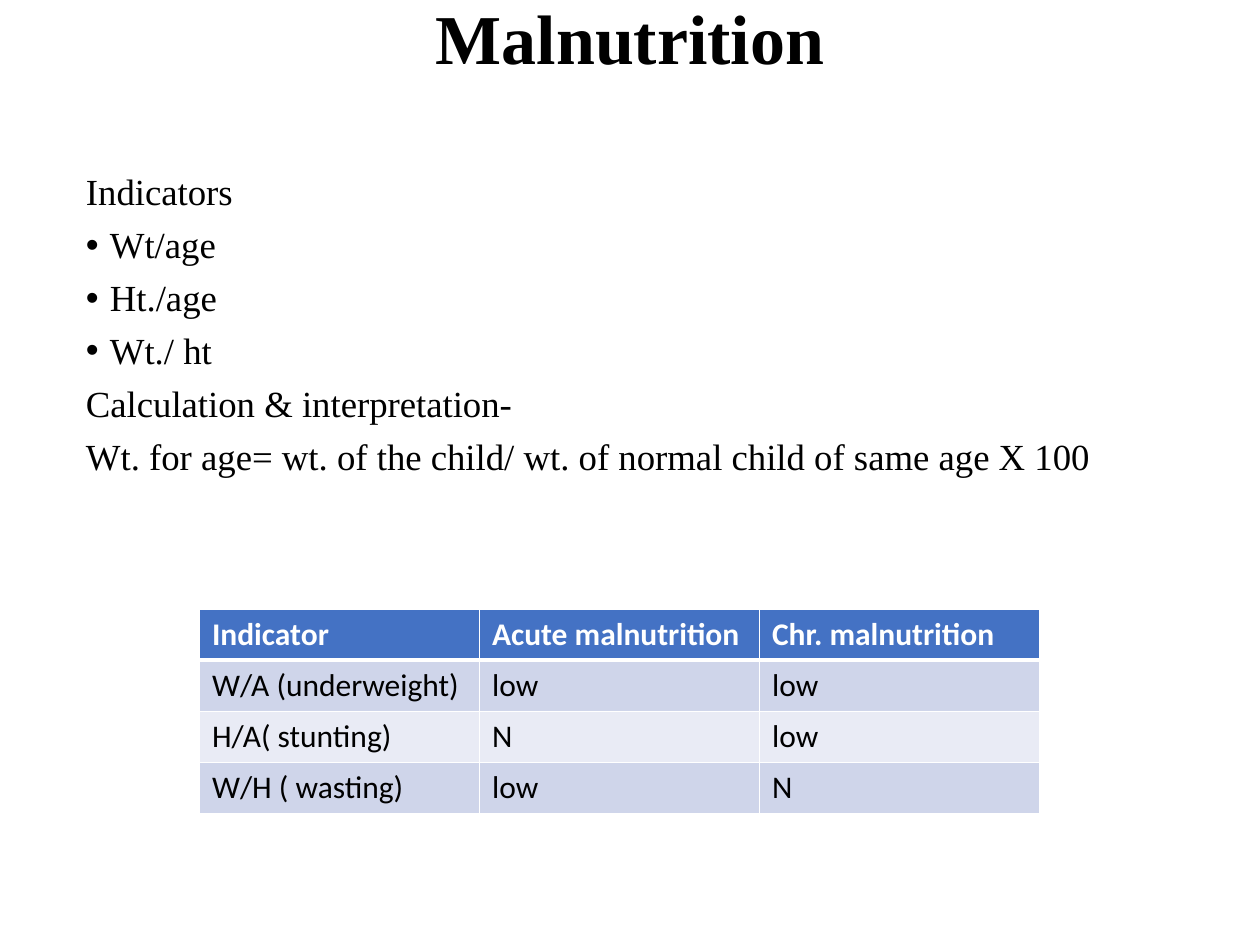
import lxml.etree
import pptx
import pptx.dml.color
import pptx.enum.text
import pptx.oxml.ns
import pptx.util

RGBColor = pptx.dml.color.RGBColor
Align = pptx.enum.text.PP_ALIGN
Anchor = pptx.enum.text.MSO_ANCHOR
Pt = pptx.util.Pt

BLACK = RGBColor(0x00, 0x00, 0x00)
WHITE = RGBColor(0xFF, 0xFF, 0xFF)
HEADER_BLUE = RGBColor(0x44, 0x72, 0xC4)
BAND_DARK = RGBColor(0xCF, 0xD5, 0xEA)
BAND_LIGHT = RGBColor(0xE9, 0xEB, 0xF5)

SERIF = "Times New Roman"
SANS = "Calibri"

# Each line of the body: text, whether it has a bullet
BODY = [
    ("Indicators", False),
    ("Wt/age", True),
    ("Ht./age", True),
    ("Wt./ ht", True),
    ("Calculation & interpretation-", False),
    ("Wt. for age= wt. of the child/ wt. of normal child of same age X 100", False),
]

INDICATORS = [
    ["Indicator", "Acute malnutrition", "Chr. malnutrition"],
    ["W/A (underweight)", "low", "low"],
    ["H/A( stunting)", "N", "low"],
    ["W/H ( wasting)", "low", "N"],
]


def add_child(parent, tag, **attributes):
    child = lxml.etree.SubElement(parent, pptx.oxml.ns.qn(tag))
    for name, value in attributes.items():
        child.set(name, str(value))
    return child


class SlideBuilder:
    """Places elements on a grid of 12 columns and 9 rows."""

    def __init__(self, deck):
        self.column = deck.slide_width / 12
        self.row = deck.slide_height / 9
        self.slide = deck.slides.add_slide(deck.slide_layouts[6])

    def place(self, left, top, width, height):
        return (round(left * self.column), round(top * self.row),
                round(width * self.column), round(height * self.row))

    def add_run(self, para, text, font, size, color, bold=False):
        run = para.add_run()
        run.text = text
        run.font.name = font
        run.font.size = Pt(size)
        run.font.color.rgb = color
        run.font.bold = bold

    def text_frame(self, area, anchor):
        frame = self.slide.shapes.add_textbox(*self.place(*area)).text_frame
        frame.word_wrap = True
        frame.vertical_anchor = anchor
        return frame

    def title(self, text, area):
        para = self.text_frame(area, Anchor.MIDDLE).paragraphs[0]
        para.alignment = Align.CENTER
        para.line_spacing = 0.9
        self.add_run(para, text, SERIF, 40, BLACK, bold=True)

    def body(self, lines, area):
        frame = self.text_frame(area, Anchor.TOP)
        indent = pptx.util.Inches(0.19)
        for index, (text, bulleted) in enumerate(lines):
            para = frame.paragraphs[0] if index == 0 else frame.add_paragraph()
            properties = para._p.get_or_add_pPr()
            properties.set("marL", str(indent))
            properties.set("indent", str(-indent))
            if bulleted:
                add_child(properties, "a:buFont", typeface="Arial")
                add_child(properties, "a:buChar", char="•")
            else:
                add_child(properties, "a:buNone")
            para.line_spacing = 0.9
            if index:
                para.space_before = Pt(7.5)
            self.add_run(para, text, SERIF, 21, BLACK)

    def border(self, cell, side, width):
        line = add_child(cell._tc.get_or_add_tcPr(), f"a:ln{side}", w=Pt(width))
        fill = add_child(line, "a:solidFill")
        add_child(fill, "a:srgbClr", val=WHITE)

    def table(self, rows, area):
        shape = self.slide.shapes.add_table(len(rows), len(rows[0]), *self.place(*area))
        for row_index, texts in enumerate(rows):
            header = row_index == 0
            band = BAND_DARK if row_index % 2 else BAND_LIGHT
            for column_index, text in enumerate(texts):
                cell = shape.table.cell(row_index, column_index)
                for side in "LRTB":
                    thick = (row_index, side) in ((0, "B"), (1, "T"))
                    self.border(cell, side, 3 if thick else 1)
                cell.fill.solid()
                cell.fill.fore_color.rgb = HEADER_BLUE if header else band
                self.add_run(cell.text_frame.paragraphs[0], text, SANS, 18,
                             WHITE if header else BLACK, bold=header)


def main():
    deck = pptx.Presentation()
    deck.slide_width = pptx.util.Inches(10)
    deck.slide_height = pptx.util.Inches(7.5)
    page = SlideBuilder(deck)
    page.title("Malnutrition", (0, 0, 12, 0.8))
    page.body(BODY, (0.7, 1.6, 11.1, 7.35))
    page.table(INDICATORS, (1.9, 5.8, 8, 1.95))
    deck.save("out.pptx")


if __name__ == "__main__":
    main()
